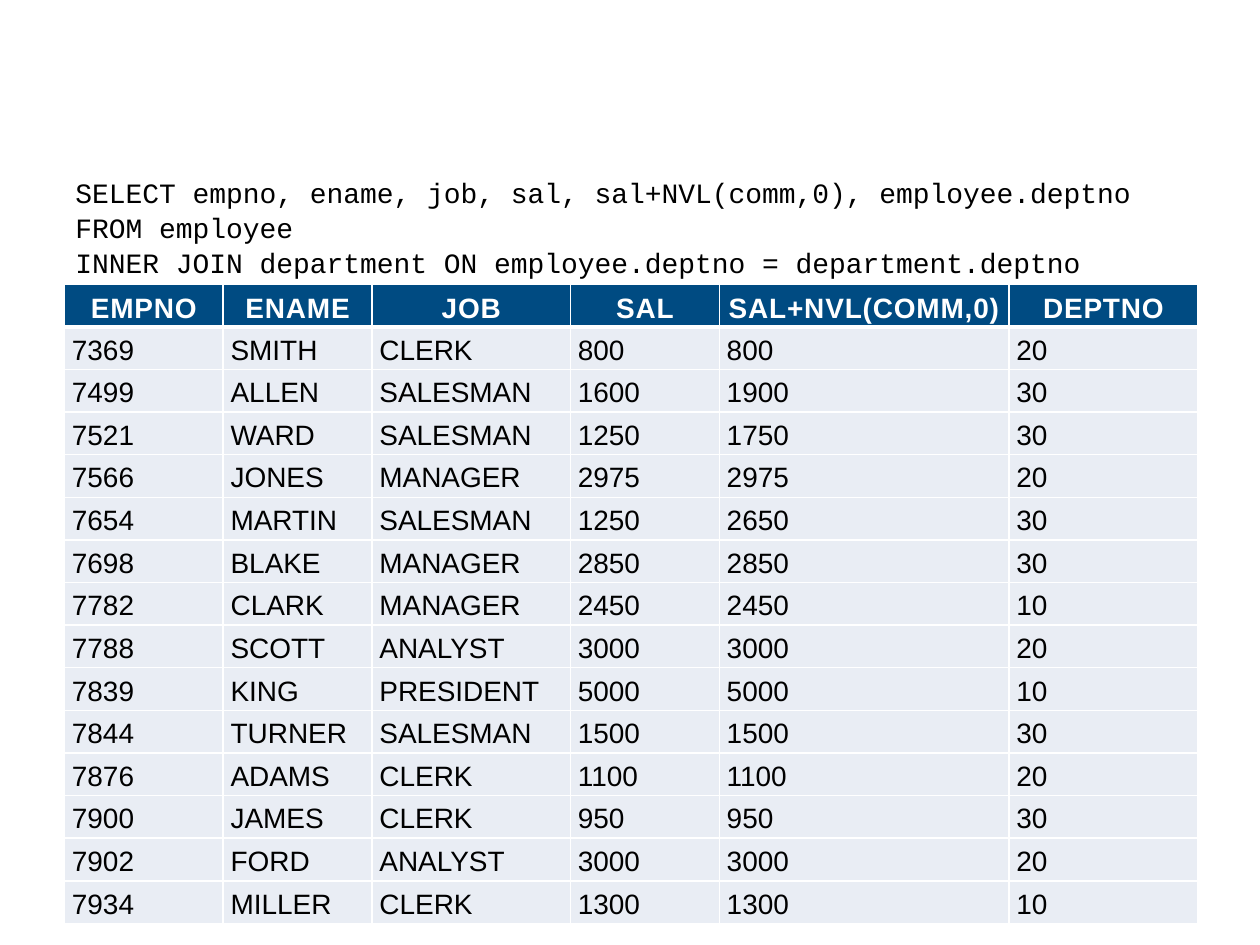
from lxml import etree
from pptx import Presentation
from pptx import util as u
from pptx.dml.color import RGBColor
from pptx.enum import text
from pptx.oxml import ns

QUERY = [
    "SELECT empno, ename, job, sal, sal+NVL(comm,0), employee.deptno",
    "FROM employee",
    "INNER JOIN department ON employee.deptno = department.deptno",
]
HEADER = ("EMPNO", "ENAME", "JOB", "SAL", "SAL+NVL(COMM,0)", "DEPTNO")
EMPLOYEES = [
    (7369, "SMITH", "CLERK", 800, 800, 20),
    (7499, "ALLEN", "SALESMAN", 1600, 1900, 30),
    (7521, "WARD", "SALESMAN", 1250, 1750, 30),
    (7566, "JONES", "MANAGER", 2975, 2975, 20),
    (7654, "MARTIN", "SALESMAN", 1250, 2650, 30),
    (7698, "BLAKE", "MANAGER", 2850, 2850, 30),
    (7782, "CLARK", "MANAGER", 2450, 2450, 10),
    (7788, "SCOTT", "ANALYST", 3000, 3000, 20),
    (7839, "KING", "PRESIDENT", 5000, 5000, 10),
    (7844, "TURNER", "SALESMAN", 1500, 1500, 30),
    (7876, "ADAMS", "CLERK", 1100, 1100, 20),
    (7900, "JAMES", "CLERK", 950, 950, 30),
    (7902, "FORD", "ANALYST", 3000, 3000, 20),
    (7934, "MILLER", "CLERK", 1300, 1300, 10),
]
COLUMN_WIDTHS = (3.2, 3.0, 4.0, 3.0, 5.84, 3.81)
ROW_HEIGHT = 0.56  # rows grow to fit their text
COLORS = {"header": "004B82", "body": "E9EDF4", "white": "FFFFFF", "black": "000000"}


def add_run(paragraph, words, font_name, color, bold=False):
    run = paragraph.add_run()
    run.text = words
    run.font.name = font_name
    run.font.size = u.Pt(16)
    run.font.bold = bold
    run.font.color.rgb = RGBColor.from_string(COLORS[color])
    return run


def add_borders(cell, bottom_width):
    properties = cell._tc.get_or_add_tcPr()
    for side, points in (("L", 1), ("R", 1), ("T", 1), ("B", bottom_width)):
        line = etree.SubElement(properties, ns.qn(f"a:ln{side}"), w=str(u.Pt(points)))
        fill = etree.SubElement(line, ns.qn("a:solidFill"))
        etree.SubElement(fill, ns.qn("a:srgbClr"), val=COLORS["white"])


def fill_cell(cell, value, is_header):
    add_borders(cell, 3 if is_header else 1)
    cell.fill.solid()
    cell.fill.fore_color.rgb = RGBColor.from_string(COLORS["header" if is_header else "body"])
    cell.margin_left = cell.margin_right = u.Cm(0.15)
    cell.margin_top = cell.margin_bottom = u.Cm(0.04)
    cell.vertical_anchor = text.MSO_ANCHOR.BOTTOM if is_header else text.MSO_ANCHOR.MIDDLE
    paragraph = cell.text_frame.paragraphs[0]
    paragraph.line_spacing = 1.15
    paragraph.alignment = text.PP_ALIGN.CENTER if is_header else text.PP_ALIGN.LEFT
    run = add_run(paragraph, str(value), "Arial", "white" if is_header else "black", is_header)
    if is_header:
        run.font._element.set("spc", "50")


def add_query(slide):
    shape = slide.shapes.add_textbox(u.Cm(1.27), u.Cm(3.33), u.Cm(22.86), u.Cm(2.8))
    frame = shape.text_frame
    frame.word_wrap = True
    frame.margin_top = u.Cm(0.2)
    for index, line in enumerate(QUERY):
        paragraph = frame.add_paragraph() if index else frame.paragraphs[0]
        paragraph.space_before = u.Pt(1)
        add_run(paragraph, line, "Courier New", "black")


def add_employee_table(slide):
    rows = [HEADER, *EMPLOYEES]
    table = slide.shapes.add_table(
        len(rows), len(HEADER), u.Cm(1.3), u.Cm(5.73),
        u.Cm(sum(COLUMN_WIDTHS)), u.Cm(ROW_HEIGHT * len(rows)),
    ).table
    table.horz_banding = False
    for column, width in zip(table.columns, COLUMN_WIDTHS):
        column.width = u.Cm(width)
    for row_index, values in enumerate(rows):
        for column_index, value in enumerate(values):
            fill_cell(table.cell(row_index, column_index), value, row_index == 0)


def main():
    presentation = Presentation()
    presentation.slide_width, presentation.slide_height = u.Cm(25.4), u.Cm(19.05)
    slide = presentation.slides.add_slide(presentation.slide_layouts[6])
    add_query(slide)
    add_employee_table(slide)
    presentation.save("out.pptx")


if __name__ == "__main__":
    main()
